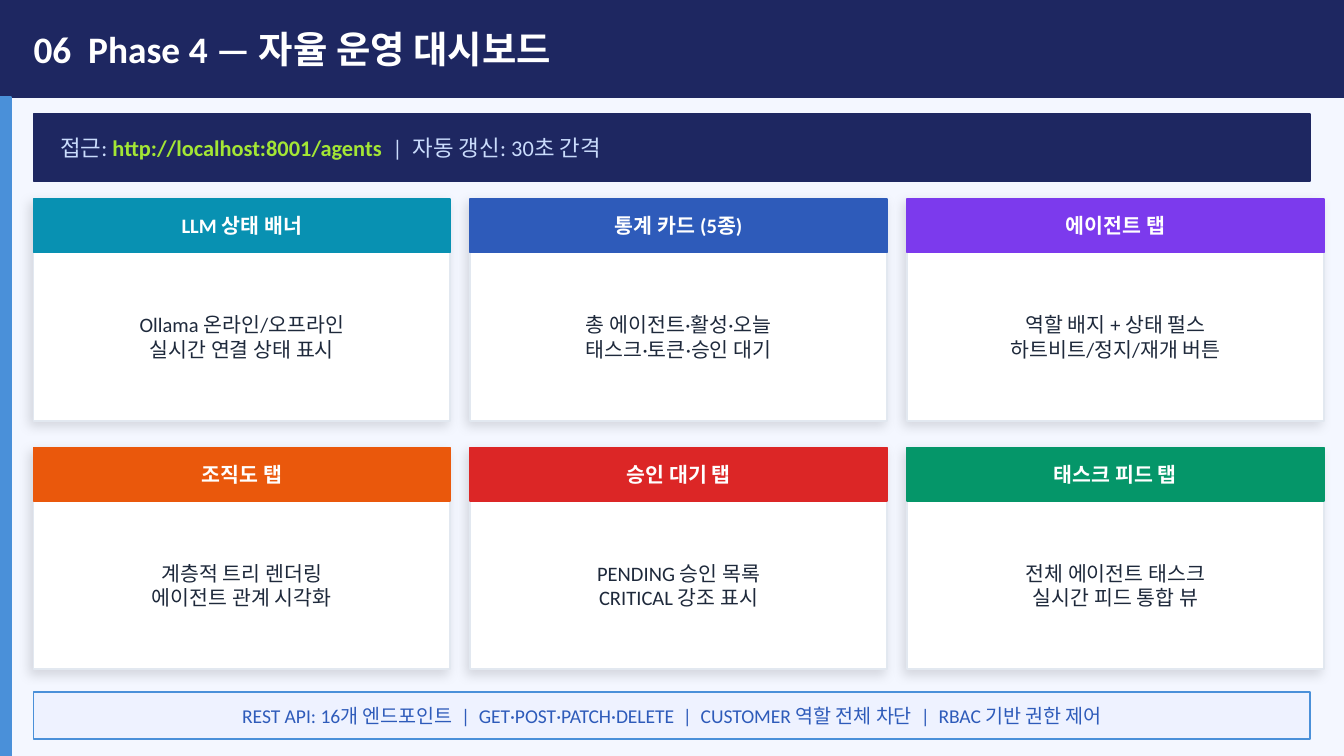
from lxml import etree
from pptx import Presentation
from pptx.dml.color import RGBColor
from pptx.enum.shapes import MSO_SHAPE
from pptx.enum.text import MSO_ANCHOR, PP_ALIGN
from pptx.oxml import parse_xml
from pptx.oxml.ns import nsdecls, qn
from pptx.util import Inches, Pt

RECT = MSO_SHAPE.RECTANGLE
MIDDLE = MSO_ANCHOR.MIDDLE
LEFT, CENTER = PP_ALIGN.LEFT, PP_ALIGN.CENTER
rgb = RGBColor.from_string
NAVY, BLUE, SKY, WHITE = "1E2761", "2E5BBA", "4A90D9", "FFFFFF"
PALE, LIME, INK = "CADCFC", "A3E635", "1E293B"

deck = Presentation()
wide = 10
high = wide * 9 / 16
deck.slide_width, deck.slide_height = Inches(wide), Inches(high)
slide = deck.slides.add_slide(deck.slide_layouts[6])
slide.background.fill.solid()
slide.background.fill.fore_color.rgb = rgb("F4F7FF")


def block(area, fill, edge):
    shape = slide.shapes.add_shape(RECT, *map(Inches, area))
    shape.shadow.inherit = False
    shape.fill.solid()
    shape.fill.fore_color.rgb = rgb(fill)
    shape.line.color.rgb = rgb(edge)
    shape.line.width = Pt(1)
    return shape


def label(area, lines, size, align=CENTER, inset=True):
    frame = slide.shapes.add_textbox(*map(Inches, area)).text_frame
    frame.word_wrap = True
    frame.vertical_anchor = MIDDLE
    if not inset:
        frame.margin_left = frame.margin_right = 0
        frame.margin_top = frame.margin_bottom = 0
    for i, line in enumerate(lines):
        para = frame.add_paragraph() if i else frame.paragraphs[0]
        para.alignment = align
        for text, color, bold in line:
            run = para.add_run()
            run.text = text
            run.font.name = "Calibri"
            run.font.size = Pt(size)
            run.font.bold = bold
            run.font.color.rgb = rgb(color)


edge, pad, head = 0.25, 0.1, 0.72
span = wide - 2 * edge

block((0, 0, wide, head), NAVY, NAVY)
block((0, head, 0.08, high - head), SKY, SKY)
label((edge, 0, span, head), [[("06  Phase 4 — 자율 운영 대시보드", WHITE, True)]], 20, LEFT, False)

block((edge, 0.85, span, 0.5), NAVY, NAVY)
access = [
    ("접근: ", PALE, False),
    ("http://localhost:8001/agents", LIME, True),
    ("  |  자동 갱신: 30초 간격", PALE, False),
]
label((edge + pad, 0.85, span - 2 * pad, 0.5), [access], 12, LEFT)

cards = [
    ("LLM 상태 배너", "0891B2", ["Ollama 온라인/오프라인", "실시간 연결 상태 표시"]),
    ("통계 카드 (5종)", BLUE, ["총 에이전트·활성·오늘", "태스크·토큰·승인 대기"]),
    ("에이전트 탭", "7C3AED", ["역할 배지 + 상태 펄스", "하트비트/정지/재개 버튼"]),
    ("조직도 탭", "EA580C", ["계층적 트리 렌더링", "에이전트 관계 시각화"]),
    ("승인 대기 탭", "DC2626", ["PENDING 승인 목록", "CRITICAL 강조 표시"]),
    ("태스크 피드 탭", "059669", ["전체 에이전트 태스크", "실시간 피드 통합 뷰"]),
]
cols, top, width, height, bar = 3, 1.48, 3.1, 1.65, 0.4
for i, (title, color, body) in enumerate(cards):
    row, col = divmod(i, cols)
    x = edge + col * (width + 0.15)
    y = top + row * (height + 0.2)
    card = block((x, y, width, height), WHITE, "E2E8F0")
    glow = card.element.spPr.find(qn("a:effectLst"))
    glow.append(parse_xml(
        f'<a:outerShdw {nsdecls("a")} blurRad="{Pt(6)}" dist="{Pt(3)}" dir="{135 * 60000}"/>'))
    tint = etree.SubElement(glow[0], qn("a:srgbClr"), val="000000")
    etree.SubElement(tint, qn("a:alpha"), val="12000")
    block((x, y, width, bar), color, color)
    label((x, y, width, bar), [[(title, WHITE, True)]], 11, inset=False)
    label((x + pad, y + bar + 0.05, width - 2 * pad, height - bar - pad),
          [[(text, INK, False)] for text in body], 11)

block((edge, 5.15, span, 0.35), "EEF2FF", SKY)
facts = ["REST API: 16개 엔드포인트", "GET·POST·PATCH·DELETE",
         "CUSTOMER 역할 전체 차단", "RBAC 기반 권한 제어"]
label((edge + pad, 5.15, span - 2 * pad, 0.35), [[("  |  ".join(facts), BLUE, False)]], 10.5)

deck.save("out.pptx")
